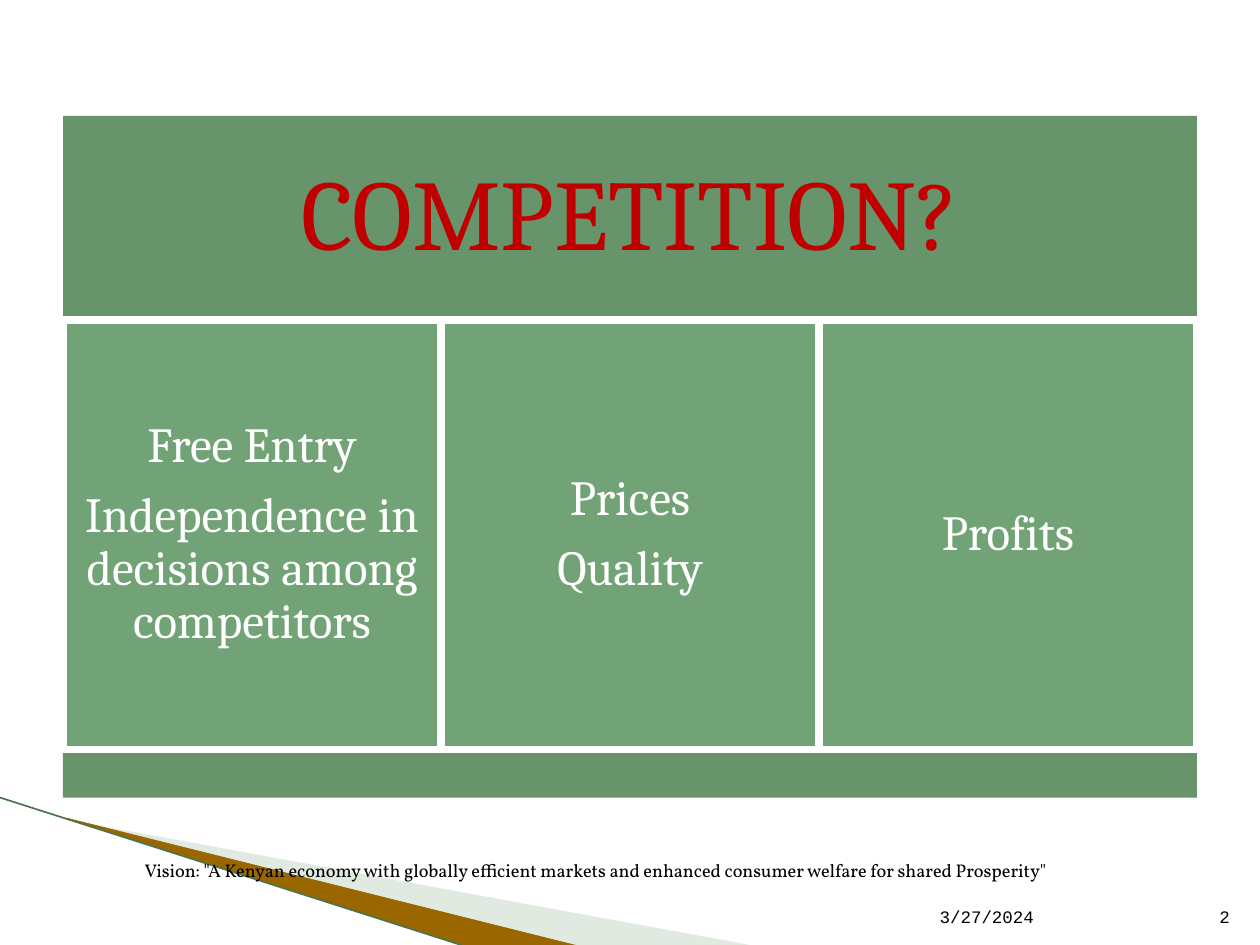
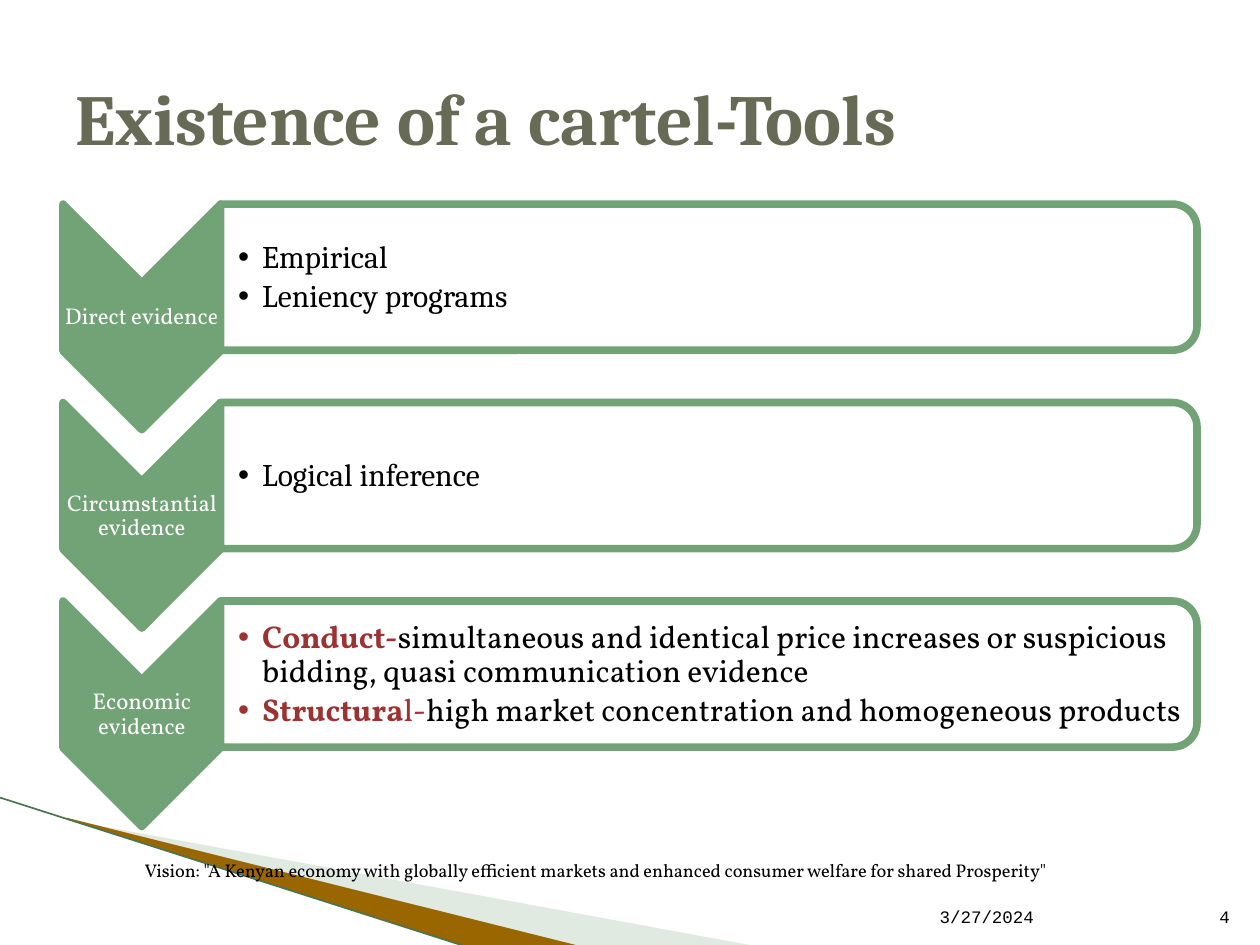
from lxml import etree
from pptx import Presentation
from pptx.dml.color import RGBColor
from pptx.enum.shapes import MSO_CONNECTOR, MSO_SHAPE
from pptx.enum.text import MSO_ANCHOR, MSO_AUTO_SIZE, PP_ALIGN
from pptx.oxml.ns import qn
from pptx.util import Inches, Pt

RECT, CHEVRON = MSO_SHAPE.RECTANGLE, MSO_SHAPE.CHEVRON
ROUND_END = MSO_SHAPE.ROUND_2_SAME_RECTANGLE
STRAIGHT = MSO_CONNECTOR.STRAIGHT
LEFT, CENTER, RIGHT = PP_ALIGN.LEFT, PP_ALIGN.CENTER, PP_ALIGN.RIGHT
TOP, MIDDLE, BOTTOM = MSO_ANCHOR.TOP, MSO_ANCHOR.MIDDLE, MSO_ANCHOR.BOTTOM
NO_FIT = MSO_AUTO_SIZE.NONE

WHITE = RGBColor(0xFF, 0xFF, 0xFF)
BLACK = RGBColor(0x00, 0x00, 0x00)
GREEN = RGBColor(0x72, 0xA3, 0x76)
BAND_GREEN = RGBColor(0x67, 0x94, 0x6B)
EDGE_GREEN = RGBColor(0x4A, 0x75, 0x4E)
PALE_GREEN = RGBColor(0xB3, 0xCB, 0xB5)
BROWN = RGBColor(0x99, 0x66, 0x00)
RED = RGBColor(0xC0, 0x00, 0x00)
DARK_RED = RGBColor(0x9D, 0x32, 0x32)
OLIVE = RGBColor(0x67, 0x6A, 0x55)

SERIF, BODY, MONO = "Cambria", "Vollkorn", "Courier New"
COLS, ROWS = 20, 15  # grid of half-inch cells
LINE = 4.33
TITLE_ONLY, COMPARISON = 5, 4
VISION = ('Vision: "A Kenyan economy with globally efficient markets and '
          'enhanced consumer welfare for shared Prosperity"')
DATE = "3/27/2024"


def put_text(sp, paras, size=18, font=SERIF, color=BLACK, bold=False,
             align=LEFT, anchor=MIDDLE, insets=(0.1, 0.05, 0.1, 0.05),
             spacing=1.0, after=0, bullet=False):
    """Fill a shape; a paragraph is a string or a list of (text, colour, bold)."""
    tf = sp.text_frame
    tf.word_wrap, tf.auto_size, tf.vertical_anchor = True, NO_FIT, anchor
    tf.margin_left, tf.margin_top, tf.margin_right, tf.margin_bottom = map(Inches, insets)
    for i, para in enumerate(paras):
        p = tf.paragraphs[0] if i == 0 else tf.add_paragraph()
        if bullet:
            pPr = p._p.get_or_add_pPr()
            pPr.set("marL", str(Inches(0.19)))
            pPr.set("indent", str(-Inches(0.19)))
            etree.SubElement(pPr, qn("a:buChar")).set("char", "•")
        p.alignment, p.line_spacing = align, spacing
        p.space_before, p.space_after = Pt(0), Pt(after)
        runs = [(para, color, bold)] if isinstance(para, str) else para
        for text, run_color, run_bold in runs:
            r = p.add_run()
            r.text = text
            r.font.name, r.font.size, r.font.bold = font, Pt(size), run_bold
            r.font.color.rgb = run_color


class Deck:
    def __init__(self):
        self.prs = Presentation()
        self.prs.slide_width, self.prs.slide_height = Inches(10), Inches(7.5)
        self.s = None

    def x(self, col):
        return round(self.prs.slide_width * col / COLS)

    def y(self, row):
        return round(self.prs.slide_height * row / ROWS)

    def box(self, col, row, w, h):
        return self.x(col), self.y(row), self.x(w), self.y(h)

    def place(self, sp, area):
        sp.left, sp.top, sp.width, sp.height = self.box(*area)

    def paint(self, sp, fill, line=None, alpha=None):
        sp.shadow.inherit = False
        sp.fill.solid()
        sp.fill.fore_color.rgb = fill
        if alpha:
            clr = sp._element.spPr.find(qn("a:solidFill"))[0]
            etree.SubElement(clr, qn("a:alpha")).set("val", str(alpha * 1000))
        if line is None:
            sp.line.fill.background()
        else:
            sp.line.color.rgb, sp.line.width = line, Pt(LINE)

    def slide(self, layout, number):
        self.s = self.prs.slides.add_slide(self.prs.slide_layouts[layout])
        # Sweep in the lower left corner
        self.outline([(1.1, 13.02), (11.9, 15), (9.12, 15), (1.1, 13)], PALE_GREEN, 40)
        self.outline([(1.06, 12.98), (9.14, 15), (7.32, 15), (1.08, 13)], BROWN)
        self.line((0, 12.66), (7.32, 15), EDGE_GREEN, 0.95)
        # Footer
        small = {"size": 10, "font": MONO, "anchor": BOTTOM}
        self.text((14.72, 14.02, 4.2, 0.8), [DATE], **small)
        self.text((18.92, 14.02, 0.8, 0.8), [number], align=RIGHT, **small)
        self.text((2.1, 13.54, 15.5, 0.7), [VISION], size=10.5, font=BODY, anchor=TOP)

    def outline(self, points, fill, alpha=None):
        pts = [(self.x(c), self.y(r)) for c, r in points]
        fb = self.s.shapes.build_freeform(*pts[0])
        fb.add_line_segments(pts[1:], close=True)
        self.paint(fb.convert_to_shape(), fill, alpha=alpha)

    def line(self, start, end, color, width):
        cx = self.s.shapes.add_connector(
            STRAIGHT, self.x(start[0]), self.y(start[1]), self.x(end[0]), self.y(end[1]))
        cx.line.color.rgb, cx.line.width = color, Pt(width)
        etree.SubElement(cx._element.spPr, qn("a:effectLst"))

    def shape(self, kind, area, fill, line=None):
        sp = self.s.shapes.add_shape(kind, *self.box(*area))
        self.paint(sp, fill, line)
        return sp

    def turned(self, kind, area, fill, line):
        """Preset turned a quarter so that it covers the given area."""
        sp = self.shape(kind, area, fill, line)
        cx, cy = sp.left + sp.width // 2, sp.top + sp.height // 2
        sp.width, sp.height = sp.height, sp.width
        sp.left, sp.top = cx - sp.width // 2, cy - sp.height // 2
        sp.rotation = 90

    def text(self, area, paras, **fmt):
        put_text(self.s.shapes.add_textbox(*self.box(*area)), paras, **fmt)

    def title(self, area, text, **fmt):
        sp = self.s.shapes.title
        self.place(sp, area)
        put_text(sp, [text], **fmt)
        return sp

    def bullets(self, sp, area, paras, **fmt):
        self.place(sp, area)
        self.s.shapes._spTree.append(sp._element)  # bring to front
        put_text(sp, paras, bullet=True, anchor=MIDDLE, spacing=0.9, after=2.7,
                 insets=(0.14, 0.01, 0.01, 0.01), **fmt)


def competition(deck):
    deck.slide(TITLE_ONLY, "2")
    # Heading band and foot band
    band = deck.title((1, 1.84, 18, 3.24), "COMPETITION?", size=57, color=RED,
                      align=CENTER, insets=[0.24] * 4, spacing=0.9)
    deck.paint(band, BAND_GREEN)
    deck.shape(RECT, (1, 11.9, 18, 0.76), BAND_GREEN)
    # Three equal cards
    cards = [["Free Entry", "Independence in decisions among competitors"],
             ["Prices", "Quality"],
             ["Profits"]]
    for i, paras in enumerate(cards):
        card = deck.shape(RECT, (1 + 6 * i, 5.08, 6, 6.82), GREEN, WHITE)
        put_text(card, paras, size=28, color=WHITE, align=CENTER,
                 insets=[0.12] * 4, spacing=0.9, after=9.8)


def cartel_tools(deck):
    deck.slide(COMPARISON, "4")
    deck.title((1, 0.6, 18, 2.5), "Existence of a cartel-Tools",
               size=41, color=OLIVE, bold=True)
    # Evidence rows: label, list font, list
    conduct = [("Conduct-", DARK_RED, True),
               ("simultaneous and identical price increases or suspicious bidding, "
                "quasi communication evidence", BLACK, False)]
    structural = [("Structura", DARK_RED, True), ("l-", DARK_RED, False),
                  ("high market concentration and homogeneous products", BLACK, False)]
    evidence = [("Direct evidence", SERIF, ["Empirical", "Leniency programs"]),
                ("Circumstantial evidence", SERIF, ["Logical inference"]),
                ("Economic evidence", BODY, [conduct, structural])]
    *bodies, spare = list(deck.s.placeholders)[1:]
    for i, (label, font, items) in enumerate(evidence):
        row = 3.24 + 3.15 * i
        deck.turned(CHEVRON, (1, row, 2.5, 3.58), GREEN, GREEN)
        deck.text((1, row + 1.26, 2.5, 1.08), [label], size=13, font=BODY, color=WHITE,
                  align=CENTER, insets=[0.01] * 4, spacing=0.9)
        deck.turned(ROUND_END, (3.5, row, 15.5, 2.32), WHITE, GREEN)
        deck.bullets(bodies[i], (3.5, row + 0.12, 15.38, 2.1), items, font=font)
    spare._element.getparent().remove(spare._element)


def main():
    deck = Deck()
    competition(deck)
    cartel_tools(deck)
    deck.prs.save("out.pptx")


if __name__ == "__main__":
    main()
